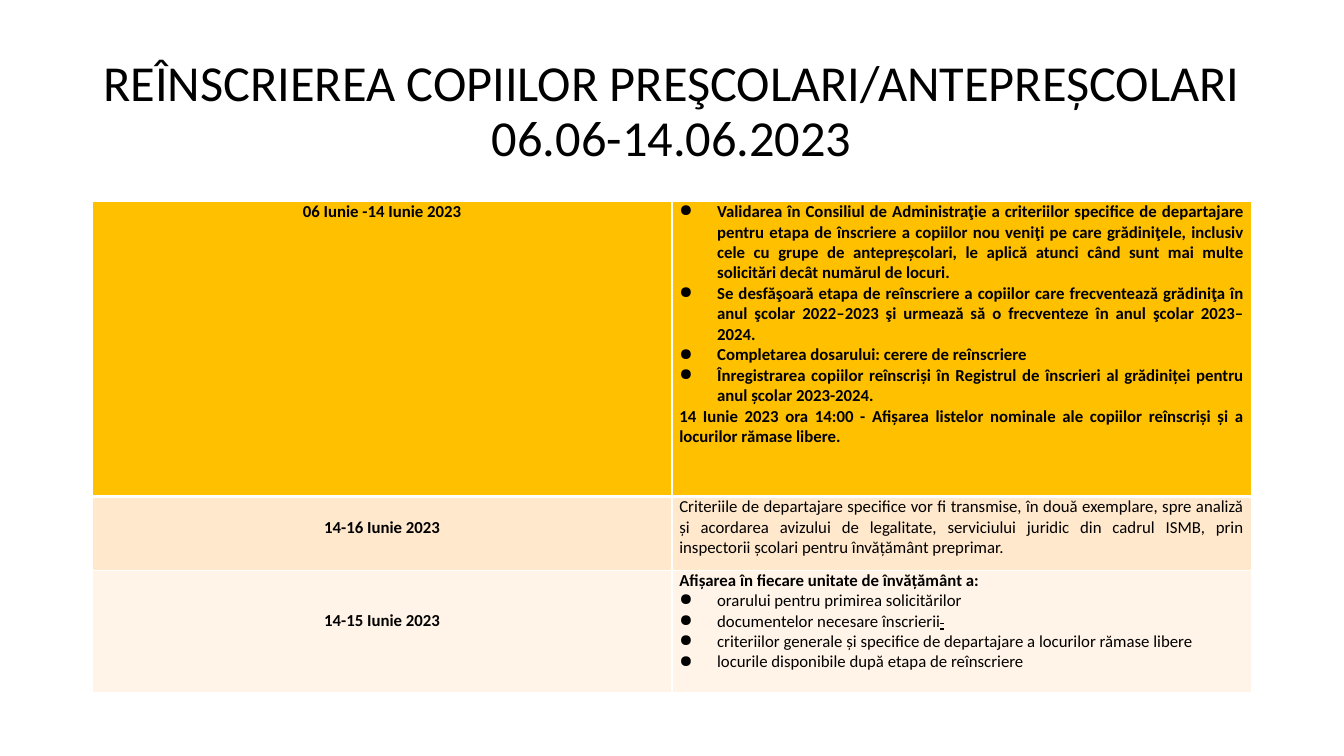
import pptx
import pptx.dml.color
import pptx.enum.text
import pptx.oxml
import pptx.oxml.ns
import pptx.util

RGBColor = pptx.dml.color.RGBColor
ALIGN = pptx.enum.text.PP_ALIGN
ANCHOR = pptx.enum.text.MSO_ANCHOR

BLACK = RGBColor(0x00, 0x00, 0x00)
WHITE = RGBColor(0xFF, 0xFF, 0xFF)
AMBER = RGBColor(0xFF, 0xC0, 0x00)
PEACH = RGBColor(0xFF, 0xE8, 0xCC)
CREAM = RGBColor(0xFF, 0xF4, 0xE7)

LEFT, WIDTH = 88, 1104
ROW_HEIGHTS = (281, 70, 117)
LINE = 20  # one line of table text


def px(length):
    return pptx.util.Emu(length * 9525)


class SlideBuilder:
    font = "Calibri"
    title_size = 36
    table_size = 12
    side_margin = 7
    bullet_indent = 36

    def __init__(self, deck):
        self.page = deck.slides.add_slide(deck.slide_layouts[6])

    def style(self, para, size, align, bold=False):
        para.alignment = align
        para.font.name = self.font
        para.font.size = pptx.util.Pt(size)
        para.font.bold = bold
        para.font.color.rgb = BLACK

    def title(self, text, left, top, width, height):
        frame = self.page.shapes.add_textbox(px(left), px(top), px(width), px(height)).text_frame
        frame.word_wrap = True
        frame.vertical_anchor = ANCHOR.MIDDLE
        para = frame.paragraphs[0]
        para.text = text
        para.line_spacing = 0.9
        self.style(para, self.title_size, ALIGN.CENTER)

    def table(self, left, top, width, heights, columns):
        frame = self.page.shapes.add_table(
            len(heights), columns, px(left), px(top), px(width), px(sum(heights)))
        table = frame.table
        table.first_row = table.horz_banding = False
        for row, height in zip(table.rows, heights):
            row.height = px(height)
        return table

    def cell(self, cell, fill, borders, anchor=ANCHOR.TOP, top=0, bottom=0):
        cell.margin_left = cell.margin_right = px(self.side_margin)
        cell.margin_top, cell.margin_bottom = px(top), px(bottom)
        cell.vertical_anchor = anchor
        properties = cell._tc.get_or_add_tcPr()
        for side, points in zip("LRTB", borders):
            properties.append(pptx.oxml.parse_xml(
                f'<a:ln{side} {pptx.oxml.ns.nsdecls("a")} w="{points * 12700}">'
                f'<a:solidFill><a:srgbClr val="{WHITE}"/></a:solidFill></a:ln{side}>'))
        cell.fill.solid()
        cell.fill.fore_color.rgb = fill

    def paragraph(self, cell, text, align, bold=False, bullet=False):
        frame = cell.text_frame
        para = frame.add_paragraph() if frame.text else frame.paragraphs[0]
        para.add_run().text = text
        self.style(para, self.table_size, align, bold)
        if bullet:
            properties = para._p.get_or_add_pPr()
            indent = px(self.bullet_indent)
            properties.set("marL", str(indent))
            properties.set("indent", str(-indent))
            properties.insert(0, pptx.oxml.parse_xml(
                f'<a:buChar {pptx.oxml.ns.nsdecls("a")} char="●"/>'))
        return para

    def struck_space(self, para):
        span = para.add_run()
        span.text = " "
        span.font.bold = span.font.underline = True
        span._r.get_or_add_rPr().set("strike", "sngStrike")


REENROLMENT_STEPS = (
    "Validarea în Consiliul de Administraţie a criteriilor specifice de departajare pentru "
    "etapa de înscriere a copiilor nou veniţi pe care grădiniţele, inclusiv cele cu grupe de "
    "antepreșcolari, le aplică atunci când sunt mai multe solicitări decât numărul de locuri.",
    "Se desfăşoară etapa de reînscriere a copiilor care frecventează grădiniţa în anul şcolar "
    "2022–2023 şi urmează să o frecventeze în anul şcolar 2023–2024.",
    "Completarea dosarului: cerere de reînscriere",
    "Înregistrarea copiilor reînscriși în Registrul de înscrieri al grădiniței pentru anul "
    "școlar 2023-2024.",
)
LISTS_POSTED = ("14 Iunie 2023 ora 14:00 - Afișarea listelor nominale ale copiilor reînscriși "
                "și a locurilor rămase libere.")
CRITERIA_SENT = (
    "Criteriile de departajare specifice vor fi transmise, în două exemplare, spre analiză și "
    "acordarea avizului de legalitate, serviciului juridic din cadrul ISMB, prin inspectorii "
    "școlari pentru învățământ preprimar.")
DOCUMENTS = "documentelor necesare înscrierii"
NOTICES = (
    "orarului pentru primirea solicitărilor",
    DOCUMENTS,
    "criteriilor generale și specifice de departajare a locurilor rămase libere",
    "locurile disponibile după etapa de reînscriere",
)


def main():
    deck = pptx.Presentation()
    deck.slide_width, deck.slide_height = px(1280), px(720)
    slide = SlideBuilder(deck)

    # Title
    slide.title("REÎNSCRIEREA COPIILOR PREŞCOLARI/ANTEPREȘCOLARI 06.06-14.06.2023",
                LEFT, 38, WIDTH, 139)

    # Calendar table: dates on the left, activities on the right
    calendar = slide.table(LEFT, 192, WIDTH, ROW_HEIGHTS, 2)
    dates = (
        ("06 Iunie -14 Iunie 2023", AMBER, (1, 1, 1, 3), {}),
        ("14-16 Iunie 2023", PEACH, (1, 1, 3, 1), {"top": LINE}),
        ("14-15 Iunie 2023", CREAM, (1, 1, 1, 1), {"anchor": ANCHOR.MIDDLE, "bottom": LINE}),
    )
    for row, (date, fill, borders, placement) in enumerate(dates):
        slide.cell(calendar.cell(row, 0), fill, borders, **placement)
        slide.cell(calendar.cell(row, 1), fill, borders)
        slide.paragraph(calendar.cell(row, 0), date, ALIGN.CENTER, bold=True)

    # Activities
    reenrolment, criteria, notices = (calendar.cell(row, 1) for row in range(3))
    for step in REENROLMENT_STEPS:
        slide.paragraph(reenrolment, step, ALIGN.JUSTIFY, bold=True, bullet=True)
    slide.paragraph(reenrolment, LISTS_POSTED, ALIGN.JUSTIFY, bold=True)

    slide.paragraph(criteria, CRITERIA_SENT, ALIGN.JUSTIFY)

    slide.paragraph(notices, "Afișarea în fiecare unitate de învățământ a:",
                    ALIGN.JUSTIFY, bold=True)
    for notice in NOTICES:
        para = slide.paragraph(notices, notice, ALIGN.LEFT, bullet=True)
        if notice == DOCUMENTS:
            slide.struck_space(para)

    deck.save("out.pptx")


if __name__ == "__main__":
    main()
